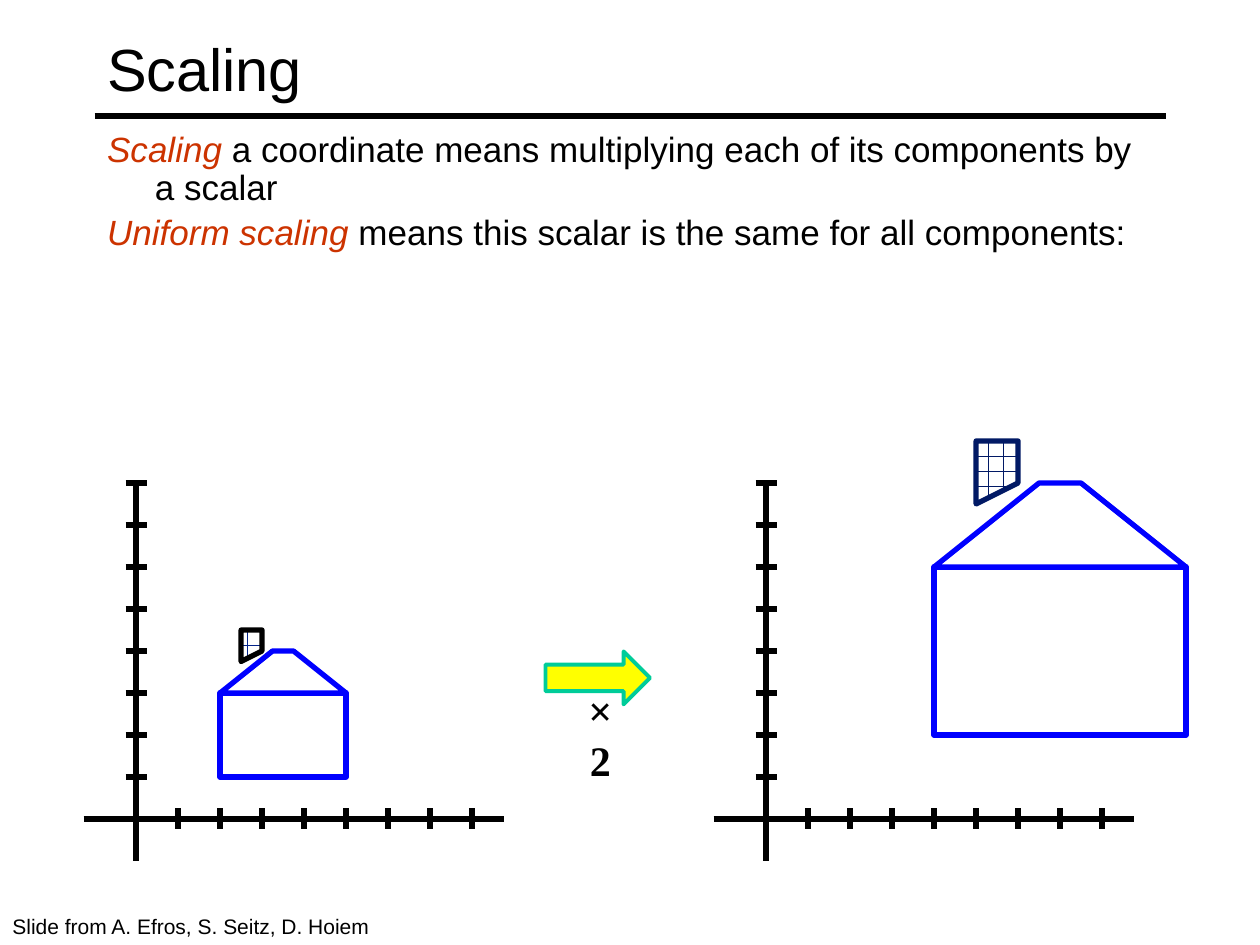
"""Build a slide that shows uniform scaling of a house by two."""
from lxml import etree
from pptx import Presentation
from pptx.dml.color import RGBColor
from pptx.enum.dml import MSO_PATTERN
from pptx.enum.shapes import MSO_CONNECTOR, MSO_SHAPE
from pptx.enum.text import MSO_ANCHOR, MSO_AUTO_SIZE, PP_ALIGN
from pptx.oxml.ns import qn
from pptx.util import Inches, Pt

STRAIGHT = MSO_CONNECTOR.STRAIGHT
RECTANGLE = MSO_SHAPE.RECTANGLE
RIGHT_ARROW = MSO_SHAPE.RIGHT_ARROW
BRICK = MSO_PATTERN.HORIZONTAL_BRICK
MIDDLE = MSO_ANCHOR.MIDDLE
TOP = MSO_ANCHOR.TOP
LEFT = PP_ALIGN.LEFT
CENTER = PP_ALIGN.CENTER
NO_FIT = MSO_AUTO_SIZE.NONE

COLORS = {
    "black": "000000",
    "white": "FFFFFF",
    "term": "CC3300",
    "house": "0000FF",
    "small_brick": "032389",
    "large_brick": "011965",
    "arrow": "FFFF00",
    "arrow_edge": "00CC99",
}
UNIT = 1 / 3
TICKS = 8
TICK_HALF = 1 / 12
AXIS_Y = 6.5
SMALL_X = 1.08
LARGE_X = 6.08
BODY = (2, 1, 5, 3)
ROOF = [(2, 3), (3.25, 4), (3.75, 4), (5, 3)]
CHIMNEY = [(2.5, 3.75), (2.5, 4.5), (3, 4.5), (3, 4)]
DEFINITIONS = [
    ("Scaling", " a coordinate means multiplying each of its components by a scalar"),
    ("Uniform scaling", " means this scalar is the same for all components:"),
]


def color(name):
    return RGBColor.from_string(COLORS[name])


def place(item, left, top, width, height):
    item.left, item.top = Inches(left), Inches(top)
    item.width, item.height = Inches(width), Inches(height)


def add_span(para, text, size, ink="black", font="Arial", bold=False, italic=False):
    span = para.add_run()
    span.text = text
    span.font.name = font
    span.font.size = Pt(size)
    span.font.bold = bold
    span.font.italic = italic
    span.font.color.rgb = color(ink)


def add_line(shapes, x1, y1, x2, y2):
    line = shapes.add_connector(STRAIGHT, Inches(x1), Inches(y1), Inches(x2), Inches(y2))
    line.line.color.rgb = color("black")
    line.line.width = Pt(3)
    etree.SubElement(line._element.spPr, qn("a:effectLst"))


def paint(shape, fill, edge, width=3):
    shape.shadow.inherit = False
    shape.fill.solid()
    shape.fill.fore_color.rgb = color(fill)
    shape.line.color.rgb = color(edge)
    shape.line.width = Pt(width)


def add_outline(shapes, points):
    corners = [(Inches(x), Inches(y)) for x, y in points]
    builder = shapes.build_freeform(*corners[0])
    builder.add_line_segments(corners[1:], close=True)
    return builder.convert_to_shape()


def add_axes(page, origin_x):
    shapes = page.shapes.add_group_shape().shapes
    add_line(shapes, origin_x, AXIS_Y - TICKS * UNIT, origin_x, AXIS_Y + UNIT)
    add_line(shapes, origin_x - 1.25 * UNIT, AXIS_Y, origin_x + 8.75 * UNIT, AXIS_Y)
    for step in range(1, TICKS + 1):
        x, y = origin_x + step * UNIT, AXIS_Y - step * UNIT
        add_line(shapes, x, AXIS_Y - TICK_HALF, x, AXIS_Y + TICK_HALF)
        add_line(shapes, origin_x - TICK_HALF, y, origin_x + TICK_HALF, y)


def add_house(page, origin_x, scale, brick, chimney_edge):
    def locate(x, y):
        return origin_x + x * scale * UNIT, AXIS_Y - y * scale * UNIT

    shapes = page.shapes.add_group_shape().shapes
    chimney = add_outline(shapes, [locate(*point) for point in CHIMNEY])
    paint(chimney, "white", chimney_edge)
    chimney.fill.patterned()
    chimney.fill.pattern = BRICK
    chimney.fill.fore_color.rgb = color(brick)
    chimney.fill.back_color.rgb = color("white")

    x1, y1, x2, y2 = BODY
    left, top = locate(x1, y2)
    right, bottom = locate(x2, y1)
    walls = shapes.add_shape(RECTANGLE, Inches(left), Inches(top),
                             Inches(right - left), Inches(bottom - top))
    paint(walls, "white", "house")
    roof = add_outline(shapes, [locate(*point) for point in ROOF])
    paint(roof, "white", "house")


def add_arrow(page):
    arrow = page.shapes.add_shape(RIGHT_ARROW, Inches(4.33), Inches(5.17),
                                  Inches(0.83), Inches(0.42))
    paint(arrow, "arrow", "arrow_edge", 2.25)


def add_label(page, bounds, text, size, align=LEFT, anchor=TOP, **style):
    box = page.shapes.add_textbox(*map(Inches, bounds))
    frame = box.text_frame
    frame.word_wrap = True
    frame.vertical_anchor = anchor
    para = frame.paragraphs[0]
    para.alignment = align
    add_span(para, text, size, **style)


def fill_title(page):
    title = page.shapes.title
    place(title, 0.75, 0.08, 8.5, 0.92)
    title.text_frame.vertical_anchor = MIDDLE
    title.text_frame.auto_size = NO_FIT
    para = title.text_frame.paragraphs[0]
    para.alignment = LEFT
    add_span(para, "Scaling", 34)


def fill_body(page):
    body = page.placeholders[1]
    place(body, 0.75, 1, 8.5, 2.62)
    frame = body.text_frame
    frame.auto_size = NO_FIT
    for index, (term, meaning) in enumerate(DEFINITIONS):
        para = frame.add_paragraph() if index else frame.paragraphs[0]
        para.line_spacing = 0.9
        para.space_before = Pt(4)
        properties = para._p.get_or_add_pPr()
        properties.set("marL", str(Inches(0.38)))
        properties.set("indent", str(-Inches(0.38)))
        etree.SubElement(properties, qn("a:buNone"))
        add_span(para, term, 20, "term", italic=True)
        add_span(para, meaning, 20)


def main():
    deck = Presentation()
    deck.slide_width, deck.slide_height = Inches(10), Inches(7.5)
    page = deck.slides.add_slide(deck.slide_layouts[1])
    fill_title(page)
    fill_body(page)
    add_line(page.shapes, 0.75, 0.92, 9.25, 0.92)
    add_axes(page, SMALL_X)
    add_house(page, SMALL_X, 1, "small_brick", "black")
    add_axes(page, LARGE_X)
    add_house(page, LARGE_X, 2, "large_brick", "large_brick")
    add_arrow(page)
    add_label(page, (4.45, 5.58, 0.63, 0.5), "× 2", 24, CENTER, MIDDLE,
              font="Times New Roman", bold=True)
    add_label(page, (0, 7.2, 3.08, 0.3), "Slide from A. Efros, S. Seitz, D. Hoiem", 12)
    deck.save("out.pptx")


if __name__ == "__main__":
    main()
